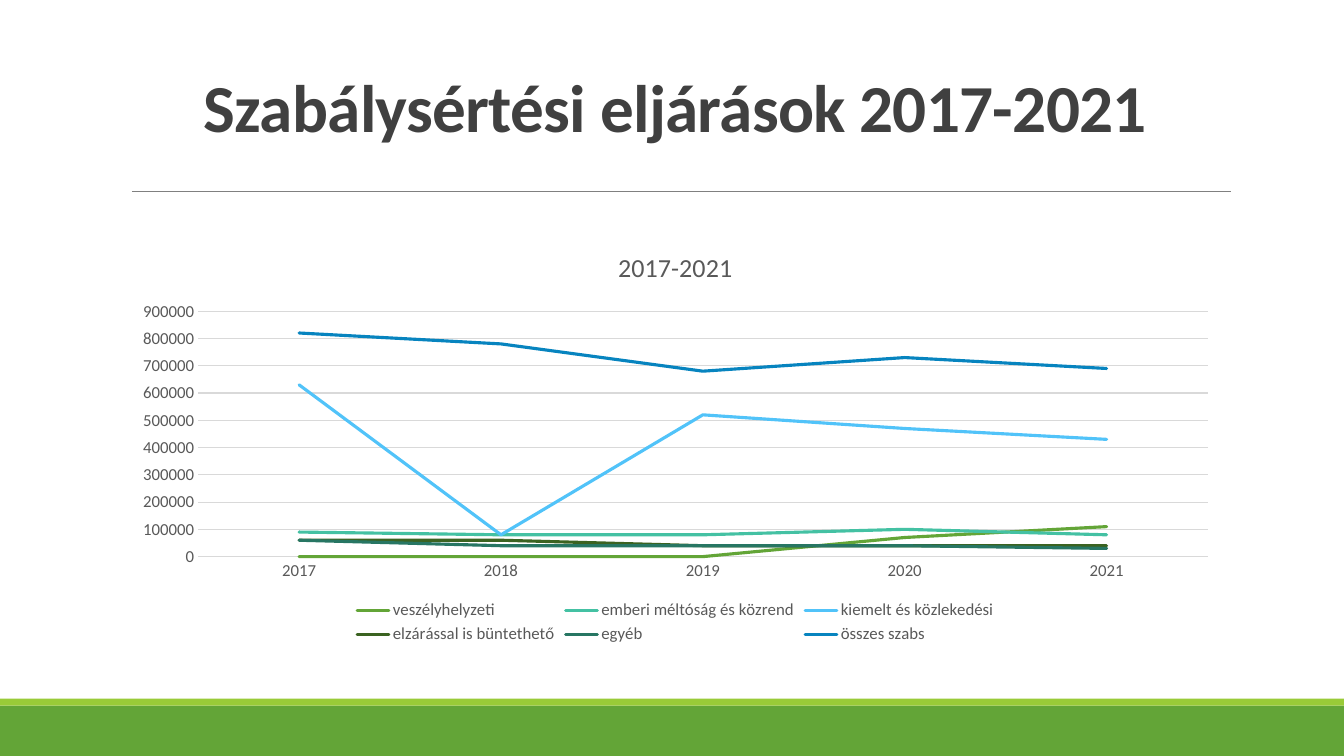
from dataclasses import dataclass

from lxml import etree
from pptx import Presentation
from pptx import util as u
from pptx.chart import data as chart_data
from pptx.dml import color
from pptx.enum import chart as chart_kinds
from pptx.enum import shapes, text
from pptx.oxml import ns


@dataclass(frozen=True)
class Theme:
    font: str = "Calibri"
    heading: str = "404040"
    label: str = "595959"
    grid: str = "D9D9D9"
    rule: str = "808080"
    band: str = "63A537"
    stripe: str = "99CB38"
    heading_size: float = 48
    chart_title_size: float = 18.6
    label_size: float = 12
    hairline: float = 0.5
    grid_width: float = 0.75
    series_width: float = 2.25


YEARS = ["2017", "2018", "2019", "2020", "2021"]
PROCEEDINGS = [
    ("veszélyhelyzeti", "63A537", (0, 0, 0, 70000, 110000)),
    ("emberi méltóság és közrend", "44C1A3", (90000, 80000, 80000, 100000, 80000)),
    ("kiemelt és közlekedési", "51C3F9", (630000, 80000, 520000, 470000, 430000)),
    ("elzárással is büntethető", "3B6321", (60000, 60000, 40000, 40000, 40000)),
    ("egyéb", "277663", (60000, 40000, 40000, 40000, 30000)),
    ("összes szabs", "0784BF", (820000, 780000, 680000, 730000, 690000)),
]


def assign(target, values):
    for name, value in values.items():
        setattr(target, name, value)


class SlideBuilder:
    def __init__(self, page, theme):
        self.page = page
        self.theme = theme

    def style_font(self, font, size, tint, bold=False):
        assign(font, {"name": self.theme.font, "size": u.Pt(size), "bold": bold})
        font.color.rgb = color.RGBColor.from_string(tint)

    def style_line(self, line, tint, width):
        line.color.rgb = color.RGBColor.from_string(tint)
        line.width = u.Pt(width)

    def band(self, left, top, width, height, tint):
        box = self.page.shapes.add_shape(
            shapes.MSO_SHAPE.RECTANGLE, *map(u.Pt, (left, top, width, height)))
        box.shadow.inherit = False
        box.fill.solid()
        box.fill.fore_color.rgb = color.RGBColor.from_string(tint)
        box.line.fill.background()

    def rule(self, left, right, top):
        line = self.page.shapes.add_connector(
            shapes.MSO_CONNECTOR.STRAIGHT, *map(u.Pt, (left, top, right, top)))
        self.style_line(line.line, self.theme.rule, self.theme.hairline)
        etree.SubElement(line._element.spPr, ns.qn("a:effectLst"))

    def heading(self, left, top, width, height, words):
        box = self.page.shapes.add_textbox(*map(u.Pt, (left, top, width, height)))
        assign(box.text_frame, {
            "word_wrap": True,
            "auto_size": text.MSO_AUTO_SIZE.NONE,
            "vertical_anchor": text.MSO_ANCHOR.BOTTOM,
        })
        para = box.text_frame.paragraphs[0]
        assign(para, {"alignment": text.PP_ALIGN.CENTER, "line_spacing": 0.85})
        span = para.add_run()
        span.text = words
        self.style_font(span.font, self.theme.heading_size, self.theme.heading, True)
        span.font._element.set("spc", "-50")

    def line_chart(self, left, top, width, height, title, categories, rows):
        theme = self.theme
        table = chart_data.CategoryChartData()
        table.categories = categories
        for name, _, values in rows:
            table.add_series(name, values)
        chart = self.page.shapes.add_chart(
            chart_kinds.XL_CHART_TYPE.LINE,
            *map(u.Pt, (left, top, width, height)), table).chart
        self.style_font(chart.font, theme.label_size, theme.label)
        assign(chart, {"has_title": True, "has_legend": True})
        chart.plots[0].vary_by_categories = False

        chart.chart_title.include_in_layout = False
        span = chart.chart_title.text_frame.paragraphs[0].add_run()
        span.text = title
        self.style_font(span.font, theme.chart_title_size, theme.label)

        assign(chart.legend, {
            "position": chart_kinds.XL_LEGEND_POSITION.BOTTOM,
            "include_in_layout": False,
        })
        self.style_font(chart.legend.font, theme.label_size, theme.label)

        for axis in (chart.category_axis, chart.value_axis):
            assign(axis, {
                "major_tick_mark": chart_kinds.XL_TICK_MARK.NONE,
                "minor_tick_mark": chart_kinds.XL_TICK_MARK.NONE,
            })
            self.style_font(axis.tick_labels.font, theme.label_size, theme.label)
        self.style_line(chart.category_axis.format.line, theme.grid, theme.grid_width)
        values_axis = chart.value_axis
        assign(values_axis, {
            "minimum_scale": 0, "maximum_scale": 900000, "major_unit": 100000,
            "has_major_gridlines": True,
        })
        assign(values_axis.tick_labels, {
            "number_format": "0", "number_format_is_linked": False,
        })
        values_axis.format.line.fill.background()
        self.style_line(values_axis.major_gridlines.format.line,
                        theme.grid, theme.grid_width)

        for series, (_, tint, _) in zip(chart.series, rows):
            series.smooth = False
            series.marker.style = chart_kinds.XL_MARKER_STYLE.NONE
            self.style_line(series.format.line, tint, theme.series_width)
            series.format.line._get_or_add_ln().set("cap", "rnd")


def main():
    deck = Presentation()
    assign(deck, {"slide_width": u.Pt(960), "slide_height": u.Pt(540)})
    theme = Theme()
    builder = SlideBuilder(deck.slides.add_slide(deck.slide_layouts[6]), theme)
    builder.band(0, 504, 960, 36, theme.band)
    builder.band(0, 499, 960, 5, theme.stripe)
    builder.rule(94.3, 879, 136.8)
    builder.heading(86.4, 22.3, 792, 85.7, "Szabálysértési eljárások 2017-2021")
    builder.line_chart(86.4, 165, 792, 298, "2017-2021", YEARS, PROCEEDINGS)
    deck.save("out.pptx")


if __name__ == "__main__":
    main()
